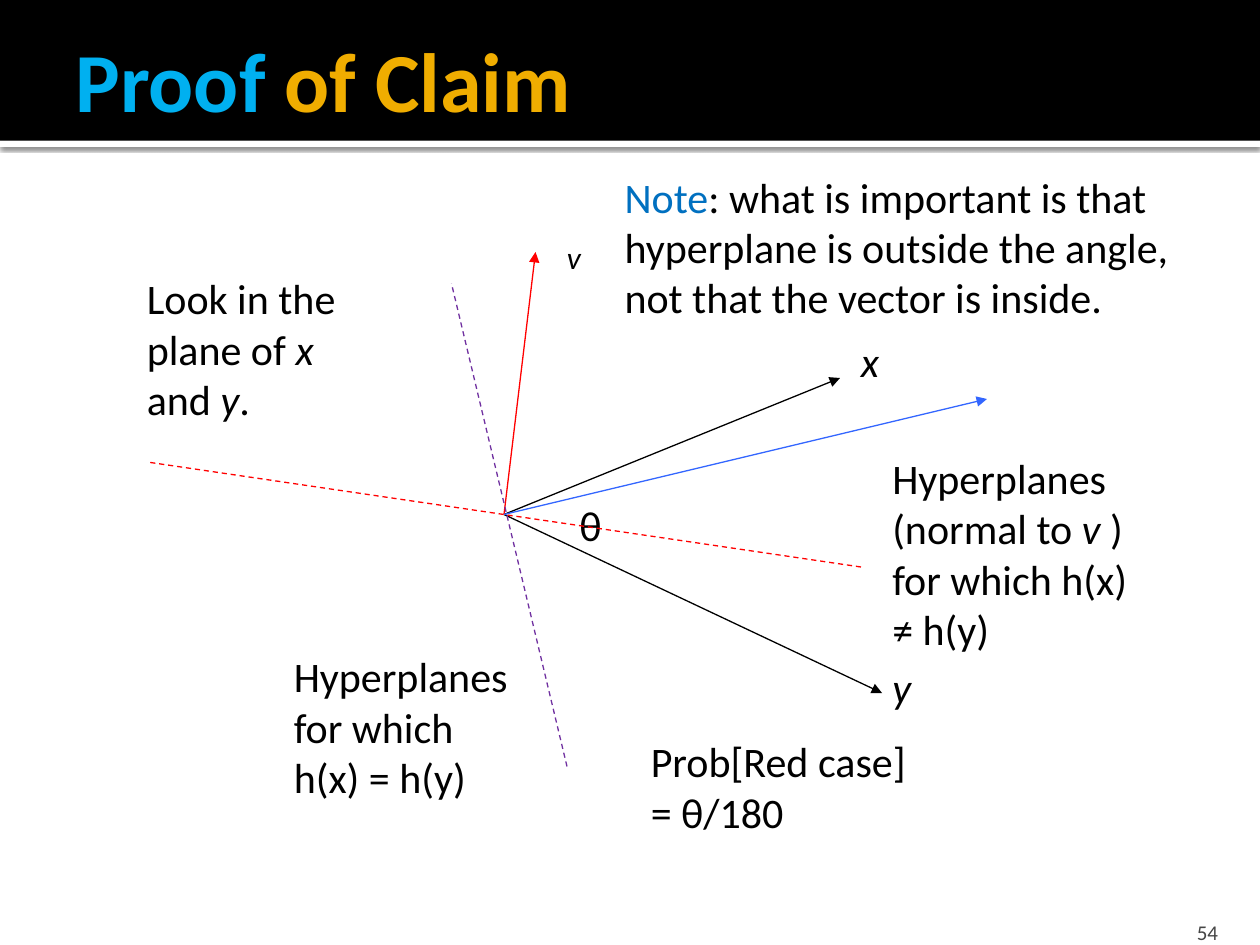
"""Build the "Proof of Claim" slide on a grid of twelve units to the inch."""
from dataclasses import dataclass

from lxml.etree import SubElement
from pptx import Presentation
from pptx.dml.color import RGBColor
from pptx.enum.dml import MSO_LINE
from pptx.enum.shapes import MSO_CONNECTOR as Link, MSO_SHAPE as Shape
from pptx.enum.text import MSO_ANCHOR as Anchor, MSO_AUTO_SIZE as Fit, PP_ALIGN as Align
from pptx.oxml.ns import qn
from pptx.util import Inches, Pt


@dataclass(frozen=True)
class Theme:
    """Colours, font and type sizes."""
    font: str = "Calibri"
    ink: str = "000000"
    paper: str = "FFFFFF"
    sky: str = "00B0F0"
    amber: str = "F0AD00"
    grey: str = "454545"
    red: str = "FF0000"
    purple: str = "7030A0"
    blue: str = "3366FF"
    note: str = "0070C0"
    title: int = 48
    body: int = 24
    label: int = 18
    footer: int = 12
    stroke: float = 0.75


def grid(units):
    """Return a length given in twelfths of an inch."""
    return Inches(units / 12)


def add_run(paragraph, text, *, font, size, color, bold=False, italic=False):
    """Append formatted text to a paragraph."""
    run = paragraph.add_run()
    run.text = text
    style = run.font
    style.name, style.size, style.bold, style.italic = font, Pt(size), bold, italic
    style.color.rgb = RGBColor.from_string(color)


class SlideBuilder:
    """Draw elements on one slide in one theme."""

    def __init__(self, slide, theme):
        """Keep the slide and its theme."""
        self.slide, self.theme = slide, theme

    def band(self, top, height, color, shadow=False):
        """Draw a full-width band."""
        bar = self.slide.shapes.add_shape(Shape.RECTANGLE, 0, grid(top), grid(120), grid(height))
        bar.shadow.inherit = False
        bar.fill.solid()
        bar.fill.fore_color.rgb = RGBColor.from_string(color)
        bar.line.fill.background()
        if shadow:
            effects = bar._element.spPr.find(qn("a:effectLst"))
            outer = SubElement(effects, qn("a:outerShdw"), blurRad=str(Pt(2.5)),
                               dist=str(Pt(0.8)), dir="5400000", algn="t", rotWithShape="0")
            tint = SubElement(outer, qn("a:srgbClr"), val=self.theme.ink)
            SubElement(tint, qn("a:alpha"), val="60000")

    def text(self, box, *lines, size=None, color=None, bold=False, anchor=Anchor.TOP,
             align=Align.LEFT, wrap=False, bottom=0.05):
        """Write lines, each a list of plain strings or (string, format) pairs."""
        frame = self.slide.shapes.add_textbox(*map(grid, box)).text_frame
        frame.word_wrap = wrap
        frame.auto_size = Fit.NONE if wrap else Fit.SHAPE_TO_FIT_TEXT
        frame.vertical_anchor = anchor
        frame.margin_bottom = Inches(bottom)
        base = dict(font=self.theme.font, size=size or self.theme.body,
                    color=color or self.theme.ink, bold=bold)
        for index, line in enumerate(lines):
            paragraph = frame.add_paragraph() if index else frame.paragraphs[0]
            paragraph.alignment = align
            for part in line:
                words, changes = (part, {}) if isinstance(part, str) else part
                add_run(paragraph, words, **{**base, **changes})

    def line(self, start, end, color, arrow=False):
        """Draw a solid arrow or a dashed line."""
        stroke = self.slide.shapes.add_connector(Link.STRAIGHT, *map(grid, start + end))
        stroke.line.width = Pt(self.theme.stroke)
        stroke.line.color.rgb = RGBColor.from_string(color)
        if arrow:
            SubElement(stroke.line._get_or_add_ln(), qn("a:tailEnd"), type="triangle")
        else:
            stroke.line.dash_style = MSO_LINE.DASH
        SubElement(stroke._element.spPr, qn("a:effectLst"))


def main():
    """Compose and save the slide."""
    deck = Presentation()
    deck.slide_width, deck.slide_height = grid(120), grid(90)
    theme = Theme()
    page = SlideBuilder(deck.slides.add_slide(deck.slide_layouts[6]), theme)
    origin = (48, 49)
    x, y, v = (((letter, {"italic": True})) for letter in "xyv")

    page.band(13.4, 0.6, theme.paper, shadow=True)
    page.band(0, 13.4, theme.ink)
    page.text((107.6, 86.4, 9.6, 3.6), ["54"], size=theme.footer, color=theme.grey,
              anchor=Anchor.BOTTOM, align=Align.RIGHT, wrap=True, bottom=0)
    page.text((6, 2, 114, 11), [("Proof", {"color": theme.sky}), " of Claim"],
              size=theme.title, color=theme.amber, bold=True, anchor=Anchor.MIDDLE, wrap=True)

    for tip in ((80, 36), (84, 66)):
        page.line(origin, tip, theme.ink, arrow=True)
    page.text((80.8, 31.4, 4.4, 6), [x])
    page.text((83.8, 62.4, 4.4, 6), [y])
    page.text((12.8, 25.4, 22, 15.6), ["Look in the"], ["plane of ", x], ["and ", y, "."])
    page.text((60.8, 69.5, 29.4, 10.8), ["Prob[Red case]"], ["= θ/180"])
    page.text((54, 47, 4.7, 6), ["θ"])

    page.line((82, 54), (14, 44), theme.red)
    page.text((83.8, 42.5, 25, 20.6), ["Hyperplanes"], ["(normal to ", v, " )"],
              ["for which h(x)"], ["≠ h(y)"])
    page.line(origin, (51, 24), theme.red, arrow=True)
    page.text((52.8, 22.1, 4.1, 5.2), [v], size=theme.label)

    page.line((54, 73), (43, 27), theme.purple)
    page.text((26.8, 61.4, 24.2, 15.6), ["Hyperplanes"], ["for which"], ["h(x) = h(y)"])
    page.line(origin, (94, 38), theme.blue, arrow=True)
    page.text((58.3, 15.7, 55.3, 15.7),
              [("Note", {"color": theme.note}), ": what is important is that"],
              ["hyperplane is outside the angle,"], ["not that the vector is inside."])
    deck.save("out.pptx")


if __name__ == "__main__":
    main()
